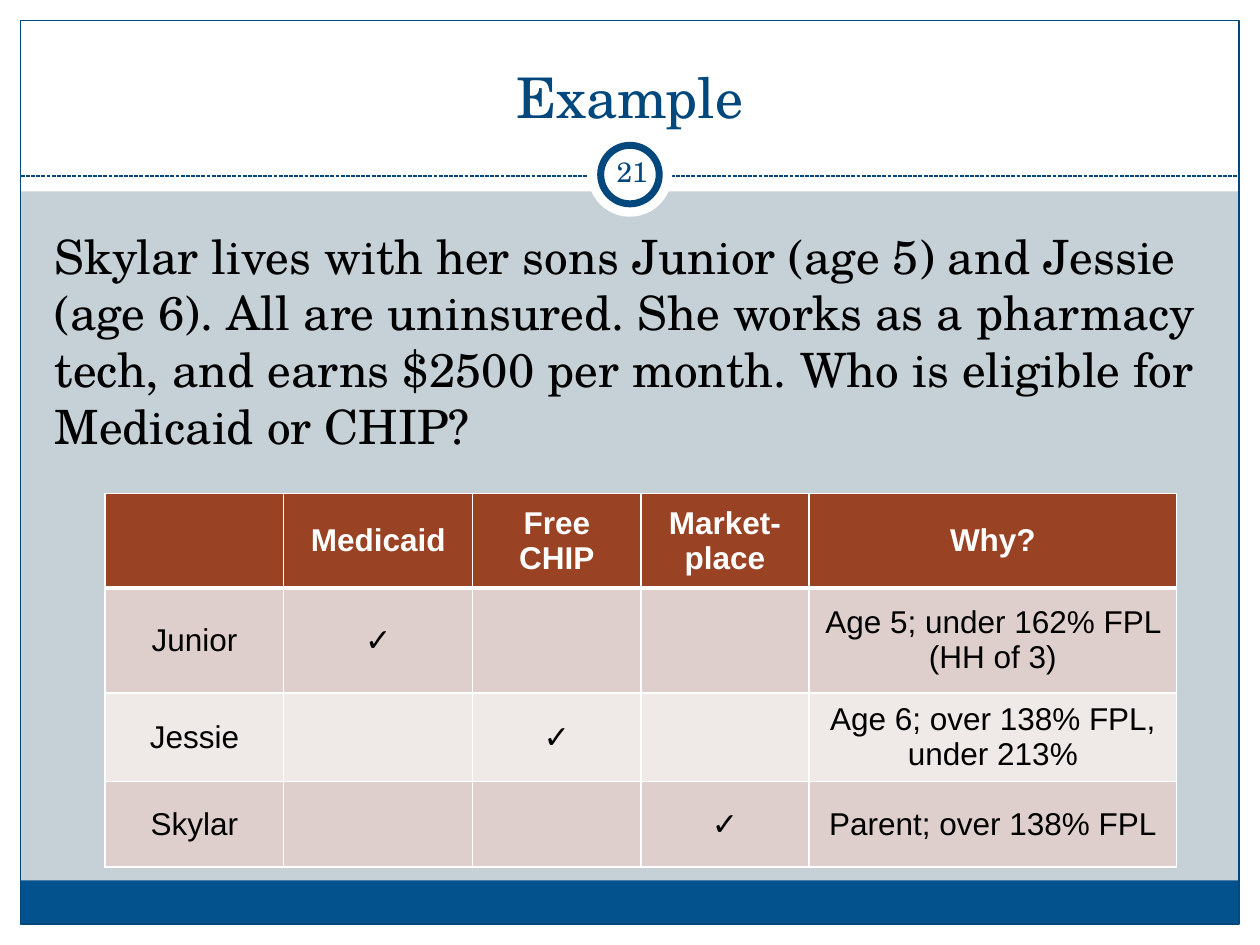
from lxml.etree import SubElement
from pptx import Presentation
from pptx.dml.color import RGBColor
from pptx.enum.dml import MSO_LINE
from pptx.enum.shapes import MSO_CONNECTOR, MSO_SHAPE
from pptx.enum.text import MSO_ANCHOR, PP_ALIGN
from pptx.oxml import parse_xml
from pptx.oxml.ns import nsdecls, qn
from pptx.util import Cm, Pt

NAVY = RGBColor(0x03, 0x48, 0x7C)
BLUE = RGBColor(0x03, 0x52, 0x8D)
GREY = RGBColor(0xC5, 0xD1, 0xD7)
WHITE = RGBColor(0xFF, 0xFF, 0xFF)
BLACK = RGBColor(0, 0, 0)
RUST = RGBColor(0x99, 0x42, 0x24)
ROSE = RGBColor(0xDE, 0xCF, 0xCD)
PALE = RGBColor(0xEF, 0xE9, 0xE8)
SERIF, SANS = "TeX Gyre Schola", "Arial"
WIDE, HIGH, EDGE = 25.4, 19.05, 0.42

HEAD = ["", "Medicaid", "Free CHIP", "Market-\nplace", "Why?"]
ROWS = [
    ["Junior", "✓", "", "", "Age 5; under 162% FPL (HH of 3)"],
    ["Jessie", "", "✓", "", "Age 6; over 138% FPL, under 213%"],
    ["Skylar", "", "", "✓", "Parent; over 138% FPL"],
]
STORY = ("Skylar lives with her sons Junior (age 5) and Jessie (age 6). "
         "All are uninsured. She works as a pharmacy tech, and earns $2500 "
         "per month. Who is eligible for Medicaid or CHIP?")


def add_shape(slide, kind, box, fill=None, line=None):
    shape = slide.shapes.add_shape(kind, *map(Cm, box))
    shape.shadow.inherit = False
    if fill is None:
        shape.fill.background()
    else:
        shape.fill.solid()
        shape.fill.fore_color.rgb = fill
    if line is None:
        shape.line.fill.background()
    else:
        shape.line.color.rgb = NAVY
        shape.line.width = Pt(line)


def style(frame, size, color, align, face=SERIF, bold=False):
    for para in frame.paragraphs:
        para.alignment = align
        font = para.font
        font.name, font.size, font.bold = face, Pt(size), bold
        font.color.rgb = color


def add_frame(slide, box):
    left, top, width, height = box
    rect = MSO_SHAPE.RECTANGLE
    # White margins and title band
    for part in [
        (left, top + height - EDGE, width, EDGE),
        (left, top, width, 3.86),
        (left, top, EDGE, height),
        (left + width - EDGE, top, EDGE, height),
    ]:
        add_shape(slide, rect, part, WHITE)
    # Footer bar and outline
    inner = width - 2 * EDGE
    add_shape(slide, rect, (left + EDGE, top + 17.75, inner, 0.87), BLUE)
    add_shape(slide, rect, (left + EDGE, top + EDGE, inner, height - 2 * EDGE),
              line=0.75)
    # Dashed rule
    rule = slide.shapes.add_connector(
        MSO_CONNECTOR.STRAIGHT, Cm(left + EDGE), Cm(top + 3.55),
        Cm(left + width - EDGE), Cm(top + 3.55))
    rule.line.color.rgb = NAVY
    rule.line.width = Pt(0.75)
    rule.line.dash_style = MSO_LINE.SQUARE_DOT
    SubElement(rule.element.spPr, qn("a:effectLst"))


def add_badge(slide, box, text):
    left, top, size = box
    # White disc with a ring inside
    for gap, line in [(0, None), (0.26, 4)]:
        side = size - 2 * gap
        add_shape(slide, MSO_SHAPE.OVAL, (left + gap, top + gap, side, side),
                  WHITE, line)
    # Page number
    label = slide.shapes.add_textbox(
        Cm(left + 0.26), Cm(top + 0.17), Cm(1.27), Cm(1.22))
    frame = label.text_frame
    frame.word_wrap = True
    frame.margin_left = frame.margin_right = Cm(0.13)
    frame.vertical_anchor = MSO_ANCHOR.MIDDLE
    frame.text = text
    style(frame, 16, NAVY, PP_ALIGN.CENTER)


def set_title(slide, box, text):
    title = slide.shapes.title
    title.left, title.top, title.width, title.height = map(Cm, box)
    frame = title.text_frame
    frame.text = text
    frame.vertical_anchor = MSO_ANCHOR.BOTTOM
    style(frame, 32, NAVY, PP_ALIGN.CENTER)
    # Bring the title in front of the white band
    title.element.getparent().append(title.element)


def add_story(slide, box):
    frame = slide.shapes.add_textbox(*map(Cm, box)).text_frame
    frame.word_wrap = True
    frame.text = STORY
    style(frame, 27, BLACK, PP_ALIGN.LEFT)
    frame.paragraphs[0].space_before = Pt(5.4)


def set_edges(cell, top, base):
    props = cell._tc.get_or_add_tcPr()
    for spot, (side, width) in enumerate(
            [("L", 1), ("R", 1), ("T", top), ("B", base)]):
        props.insert(spot, parse_xml(
            f'<a:ln{side} {nsdecls("a")} w="{Pt(width)}"><a:solidFill>'
            f'<a:srgbClr val="{WHITE}"/></a:solidFill></a:ln{side}>'))


def add_grid(slide, box):
    data = [HEAD] + ROWS
    grid = slide.shapes.add_table(
        len(data), len(HEAD), *map(Cm, box)).table
    for col, width in zip(grid.columns, [3.6, 3.81, 3.39, 3.39, 7.41]):
        col.width = Cm(width)
    for row, height in zip(grid.rows, [1.9, 2.12, 1.73, 1.73]):
        row.height = Cm(height)
    for r, texts in enumerate(data):
        head = r == 0
        for c, text in enumerate(texts):
            cell = grid.cell(r, c)
            cell.text = text
            cell.vertical_anchor = MSO_ANCHOR.MIDDLE
            cell.fill.solid()
            cell.fill.fore_color.rgb = RUST if head else (PALE, ROSE)[r % 2]
            style(cell.text_frame, 18, WHITE if head else BLACK,
                  PP_ALIGN.CENTER, SANS, head)
            set_edges(cell, 3 if r == 1 else 1, 3 if head else 1)


def main():
    deck = Presentation()
    deck.slide_width, deck.slide_height = Cm(WIDE), Cm(HIGH)
    slide = deck.slides.add_slide(deck.slide_layouts[5])
    back = slide.background.fill
    back.solid()
    back.fore_color.rgb = GREY
    add_frame(slide, (0, 0, WIDE, HIGH))
    add_badge(slide, (11.85, 2.67, 1.7), "21")
    set_title(slide, (0.85, 0.64, 23.7, 2.1), "Example")
    add_story(slide, (0.85, 4.45, 23.62, 13.77))
    add_grid(slide, (2.12, 9.95, 21.6, 7.48))
    deck.save("out.pptx")


if __name__ == "__main__":
    main()
